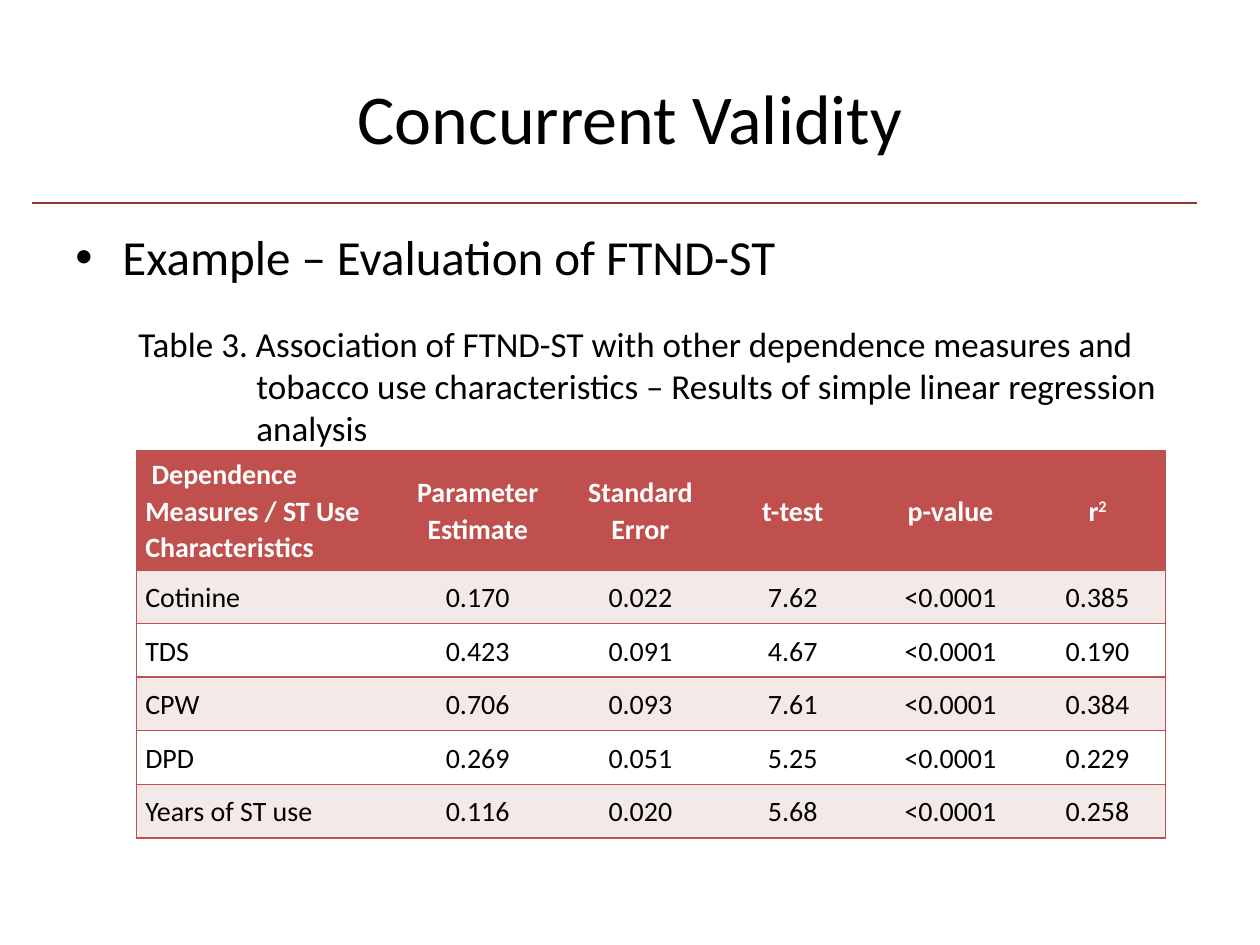
import pptx
import pptx.dml.color
import pptx.enum.shapes
import pptx.enum.text
import pptx.oxml
import pptx.oxml.ns
import pptx.util
from pptx.util import Cm

ALIGN = pptx.enum.text.PP_ALIGN
ANCHOR = pptx.enum.text.MSO_ANCHOR
RED, PALE, WHITE, BLACK = "C0504D", "F4E9E9", "FFFFFF", "000000"


def color(hex_code):
    return pptx.dml.color.RGBColor.from_string(hex_code)


class SlideBuilder:
    font_name = "Calibri"
    rule_color = "953735"

    def __init__(self, slide):
        self.slide = slide

    def format_paragraph(self, paragraph, size, hex_code=BLACK, bold=False, align=ALIGN.LEFT):
        paragraph.alignment = align
        for run in paragraph.runs:
            run.font.name = self.font_name
            run.font.size = pptx.util.Pt(size)
            run.font.bold = bold
            run.font.color.rgb = color(hex_code)

    def rule(self, left, right, top):
        line = self.slide.shapes.add_connector(
            pptx.enum.shapes.MSO_CONNECTOR.STRAIGHT, Cm(left), Cm(top), Cm(right), Cm(top))
        line.line.color.rgb = color(self.rule_color)
        line.line.width = pptx.util.Pt(1.5)
        line._element.spPr.append(pptx.oxml.parse_xml(
            f'<a:effectLst {pptx.oxml.ns.nsdecls("a")}/>'))

    def text_box(self, left, top, width, height, anchor=ANCHOR.TOP):
        frame = self.slide.shapes.add_textbox(
            Cm(left), Cm(top), Cm(width), Cm(height)).text_frame
        frame.word_wrap = True
        frame.vertical_anchor = anchor
        return frame

    def hang(self, paragraph, margin, indent, bullet=None):
        properties = paragraph._p.get_or_add_pPr()
        properties.set("marL", str(Cm(margin)))
        properties.set("indent", str(Cm(indent)))
        if bullet:
            ns = pptx.oxml.ns.nsdecls("a")
            properties.append(pptx.oxml.parse_xml(f'<a:buFont {ns} typeface="Arial"/>'))
            properties.append(pptx.oxml.parse_xml(f'<a:buChar {ns} char="{bullet}"/>'))

    def border(self, cell, sides):
        """Draw the given sides (of L, R, T, B) and clear the others."""
        for side in "LRTB":
            fill = (f'<a:solidFill><a:srgbClr val="{RED}"/></a:solidFill>'
                    if side in sides else "<a:noFill/>")
            cell._tc.get_or_add_tcPr().append(pptx.oxml.parse_xml(
                f'<a:ln{side} {pptx.oxml.ns.nsdecls("a")} w="12700">{fill}</a:ln{side}>'))

    def cell(self, cell, text, fill, sides, align, header):
        cell.margin_left = cell.margin_right = Cm(0.18)
        cell.margin_top = cell.margin_bottom = 0
        cell.vertical_anchor = ANCHOR.MIDDLE
        self.border(cell, sides)
        cell.fill.solid()
        cell.fill.fore_color.rgb = color(fill)
        base, _, exponent = text.partition("^")
        paragraph = cell.text_frame.paragraphs[0]
        paragraph.text = base
        paragraph.line_spacing = 1.07
        if exponent:
            raised = paragraph.add_run()
            raised.text = exponent
            raised.font._element.set("baseline", "30000")
        self.format_paragraph(paragraph, 16, WHITE if header else BLACK, header, align)

    def table(self, left, top, widths, heights, rows):
        table = self.slide.shapes.add_table(
            len(rows), len(widths), Cm(left), Cm(top),
            Cm(sum(widths)), Cm(sum(heights))).table
        for column, width in zip(table.columns, widths):
            column.width = Cm(width)
        for r, (values, height) in enumerate(zip(rows, heights)):
            table.rows[r].height = Cm(height)
            fill = RED if r == 0 else PALE if r % 2 else WHITE
            for c, value in enumerate(values):
                sides = "TB" + "L" * (c == 0) + "R" * (c == len(values) - 1)
                align = ALIGN.CENTER if c else ALIGN.LEFT
                self.cell(table.cell(r, c), value, fill, sides, align, r == 0)


def main():
    deck = pptx.Presentation()
    deck.slide_width, deck.slide_height = Cm(25.4), Cm(19.05)
    builder = SlideBuilder(deck.slides.add_slide(deck.slide_layouts[6]))

    # Title and rule
    builder.rule(0.64, 24.13, 4.09)
    title = builder.text_box(1.27, 0.76, 22.86, 3.18, ANCHOR.MIDDLE).paragraphs[0]
    title.text = "Concurrent Validity"
    builder.format_paragraph(title, 40, align=ALIGN.CENTER)

    # Example heading and table caption
    body = builder.text_box(1.27, 4.45, 22.86, 12.57)
    example = body.paragraphs[0]
    example.text = "Example – Evaluation of FTND-ST"
    builder.hang(example, 0.95, -0.95, "•")
    builder.format_paragraph(example, 28)
    caption = body.add_paragraph()
    caption.text = ("Table 3. Association of FTND-ST with other dependence measures and "
                    "tobacco use characteristics – Results of simple linear regression analysis")
    caption.space_before = pptx.util.Pt(21)
    builder.hang(caption, 3.65, -2.38)
    builder.format_paragraph(caption, 20)

    # Regression results; ^ marks a superscript
    results = [
        (" Dependence Measures / ST Use Characteristics", "Parameter Estimate",
         "Standard Error", "t-test", "p-value", "r^2"),
        ("Cotinine", "0.170", "0.022", "7.62", "<0.0001", "0.385"),
        ("TDS", "0.423", "0.091", "4.67", "<0.0001", "0.190"),
        ("CPW", "0.706", "0.093", "7.61", "<0.0001", "0.384"),
        ("DPD", "0.269", "0.051", "5.25", "<0.0001", "0.229"),
        ("Years of ST use", "0.116", "0.020", "5.68", "<0.0001", "0.258"),
    ]
    builder.table(2.75, 9.09, [5.08, 3.6, 2.96, 3.18, 3.18, 2.75],
                  [2.4] + [1.08] * 5, results)

    deck.save("out.pptx")


if __name__ == "__main__":
    main()
